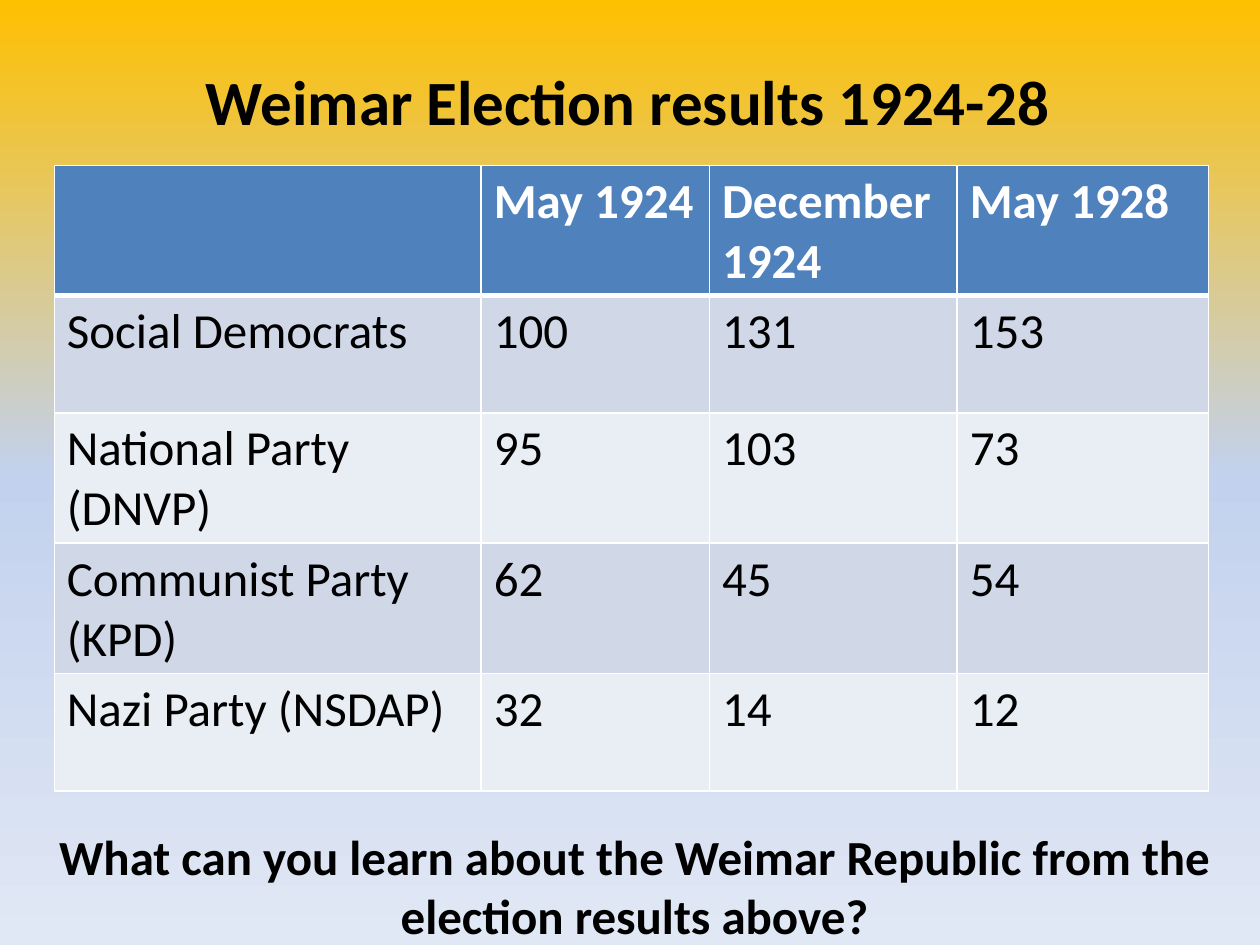
from copy import deepcopy
from dataclasses import dataclass

from pptx import Presentation
from pptx.dml.color import RGBColor
from pptx.enum import text
from pptx.oxml import ns, parse_xml
from pptx.util import Pt


@dataclass(frozen=True)
class Theme:
    font: str = "Calibri"
    title_size: int = 36
    body_size: int = 28
    ink: str = "000000"
    white: str = "FFFFFF"
    header: str = "4F81BD"
    bands: tuple = ("D0D8E8", "E9EDF4")
    backdrop: tuple = ((0, "FFC000"), (0.5, "C2D1ED"), (1, "E1E8F5"))
    rule: int = 1
    header_rule: int = 3


class SlideBuilder:
    def __init__(self, slide, theme):
        self.slide = slide
        self.theme = theme

    def background(self):
        fill = self.slide.background.fill
        fill.gradient()
        fill.gradient_angle = 270
        stops = self.slide.element.find(".//" + ns.qn("a:gsLst"))
        stops.append(deepcopy(stops[-1]))
        for stop, (position, color) in zip(fill.gradient_stops, self.theme.backdrop):
            stop.position = position
            stop.color.rgb = RGBColor.from_string(color)

    def format_text(self, frame, size, color, bold, align=text.PP_ALIGN.LEFT):
        for paragraph in frame.paragraphs:
            paragraph.alignment = align
            for run in paragraph.runs:
                run.font.name = self.theme.font
                run.font.size = Pt(size)
                run.font.bold = bold
                run.font.color.rgb = RGBColor.from_string(color)

    def heading(self, words, box, size, align):
        heading = self.slide.shapes.title
        self.place(heading, words, box, size, align)

    def caption(self, words, box, size, align):
        caption = self.slide.shapes.add_textbox(*map(Pt, box))
        self.place(caption, words, box, size, align)

    def place(self, shape, words, box, size, align):
        shape.left, shape.top, shape.width, shape.height = map(Pt, box)
        frame = shape.text_frame
        frame.text = words
        frame.word_wrap = True
        frame.auto_size = text.MSO_AUTO_SIZE.SHAPE_TO_FIT_TEXT
        frame.vertical_anchor = text.MSO_ANCHOR.TOP
        self.format_text(frame, size, self.theme.ink, True, align)

    def borders(self, cell, bottom):
        properties = cell._tc.get_or_add_tcPr()
        widths = {"L": self.theme.rule, "R": self.theme.rule, "T": self.theme.rule, "B": bottom}
        for side, width in widths.items():
            properties.append(parse_xml(
                f'<a:ln{side} {ns.nsdecls("a")} w="{Pt(width)}"><a:solidFill>'
                f'<a:srgbClr val="{self.theme.white}"/></a:solidFill></a:ln{side}>'))

    def table(self, rows, left, top, column_widths, row_height):
        theme = self.theme
        table = self.slide.shapes.add_table(
            len(rows), len(column_widths), Pt(left), Pt(top),
            Pt(sum(column_widths)), Pt(row_height * len(rows))).table
        for column, width in zip(table.columns, column_widths):
            column.width = Pt(width)
        for r, row in enumerate(rows):
            is_header = r == 0
            fill = theme.header if is_header else theme.bands[(r - 1) % 2]
            ink = theme.white if is_header else theme.ink
            for c, words in enumerate(row):
                cell = table.cell(r, c)
                cell.text_frame.text = words
                self.format_text(cell.text_frame, theme.body_size, ink, is_header)
                top_row_bottom = theme.header_rule if is_header else theme.rule
                self.borders(cell, top_row_bottom)
                if r == 1:
                    edge = cell._tc.tcPr.find(ns.qn("a:lnT"))
                    edge.set("w", str(Pt(theme.header_rule)))
                cell.fill.solid()
                cell.fill.fore_color.rgb = RGBColor.from_string(fill)


RESULTS = (
    ("", "May 1924", "December 1924", "May 1928"),
    ("Social Democrats", "100", "131", "153"),
    ("National Party (DNVP)", "95", "103", "73"),
    ("Communist Party (KPD)", "62", "45", "54"),
    ("Nazi Party (NSDAP)", "32", "14", "12"),
)


def main():
    deck = Presentation()
    deck.slide_width, deck.slide_height = Pt(720), Pt(540)
    theme = Theme()
    page = SlideBuilder(deck.slides.add_slide(deck.slide_layouts[5]), theme)
    page.background()
    page.table(RESULTS, 31, 94.5, (244, 130.5, 141.5, 143.5), 67)
    page.heading("Weimar Election results 1924-28", (110.5, 32, 635, 51),
                 theme.title_size, text.PP_ALIGN.LEFT)
    page.caption("What can you learn about the Weimar Republic from the election results above?",
                 (25, 469, 675, 75), theme.body_size, text.PP_ALIGN.CENTER)
    deck.save("out.pptx")


if __name__ == "__main__":
    main()
